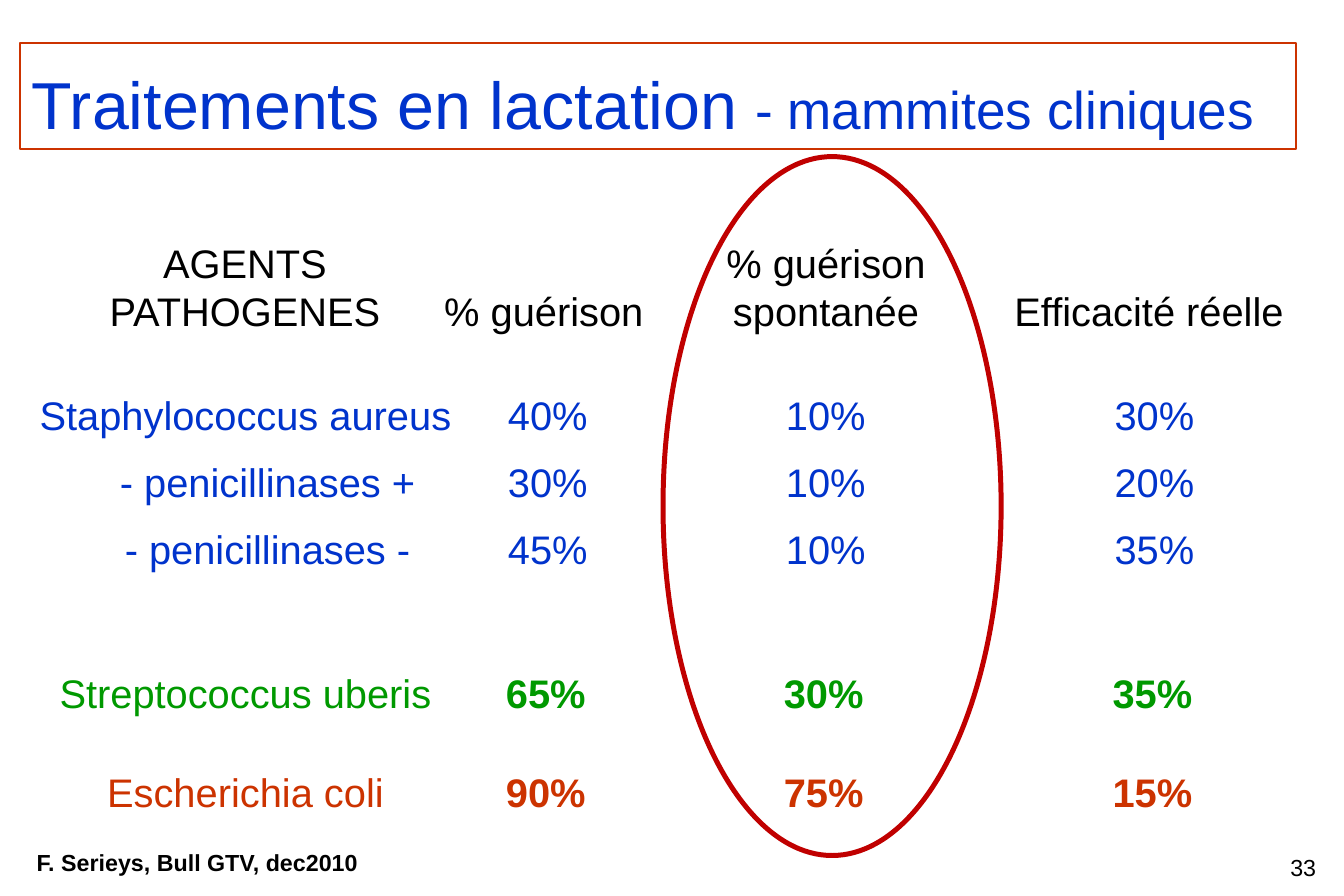
from pptx import Presentation
from pptx.dml.color import RGBColor
from pptx.enum.shapes import MSO_SHAPE as Shape
from pptx.enum.text import MSO_ANCHOR as Anchor, PP_ALIGN as Align
from pptx.util import Cm, Pt

COLOURS = {"black": "000000", "blue": "0033CC", "green": "009900",
           "red": "CC3300", "ring": "C00000"}
TITLE = [("Traitements en lactation ", 40), ("- mammites cliniques", 32)]

# lines, left, width, wraps
HEADERS = [
    (["AGENTS PATHOGENES"], 1.83, 6.76, True),
    (["% guérison"], 9.19, 4.75, False),
    (["% guérison", "spontanée"], 15.19, 4.75, False),
    (["Efficacité réelle"], 21.31, 6.25, False),
]
# top, colour, agents, then one list of rates per column
GROUPS = [
    (8.18, "blue",
     ["Staphylococcus aureus", "- penicillinases +", "- penicillinases -"],
     [["40%", "30%", "45%"], ["10%", "10%", "10%"], ["30%", "20%", "35%"]]),
    (14.1, "green", ["Streptococcus uberis"], [["65%"], ["30%"], ["35%"]]),
    (16.2, "red", ["Escherichia coli"], [["90%"], ["75%"], ["15%"]]),
]
SOURCE = "F. Serieys, Bull GTV, dec2010"
PAGE = "33"

RATE_LEFTS = [10.29, 16.2, 23.19]
AGENT_LEFT, AGENT_WIDTH, RATE_WIDTH = 0.28, 9.88, 2.72
LINE_HEIGHT, HEADER_BOTTOM = 1.27, 7.24
BOLD_SHIFT = 0.22
SUB_INDENT = Cm(0.94)


def colour(name):
    return RGBColor.from_string(COLOURS[name])


def style(font, size, colour_name, bold=False):
    font.name, font.size, font.bold = "Arial", Pt(size), bold
    font.color.rgb = colour(colour_name)


def add_text(slide, lines, box, colour_name="black", size=24, bold=False,
             align=Align.CENTER, wrap=True, spacing=1.0, indent=0):
    """Spacing and indent apply to every line after the first."""
    frame = slide.shapes.add_textbox(*map(Cm, box)).text_frame
    frame.word_wrap = wrap
    for number, line in enumerate(lines):
        paragraph = frame.add_paragraph() if number else frame.paragraphs[0]
        paragraph.text = line
        paragraph.alignment = align
        if number:
            paragraph.line_spacing = spacing
            paragraph._p.get_or_add_pPr().set("marL", str(indent))
        style(paragraph.font, size, colour_name, bold)
    return frame


def add_outline(slide, kind, box, colour_name, width):
    shape = slide.shapes.add_shape(kind, *map(Cm, box))
    shape.shadow.inherit = False
    shape.fill.background()
    shape.line.color.rgb = colour(colour_name)
    shape.line.width = Pt(width)
    return shape


def add_title(slide):
    shape = add_outline(slide, Shape.RECTANGLE, (0.43, 0.91, 27.13, 2.26), "red", 1)
    frame = shape.text_frame
    frame.word_wrap = True
    frame.vertical_anchor = Anchor.BOTTOM
    paragraph = frame.paragraphs[0]
    paragraph.alignment = Align.LEFT
    for text, size in TITLE:
        run = paragraph.add_run()
        run.text = text
        style(run.font, size, "blue")


def add_headers(slide):
    for lines, left, width, wrap in HEADERS:
        height = 2.29 if wrap or len(lines) > 1 else LINE_HEIGHT
        add_text(slide, lines, (left, HEADER_BOTTOM - height, width, height), wrap=wrap)


def add_groups(slide):
    for top, colour_name, agents, columns in GROUPS:
        single = len(agents) == 1
        height = LINE_HEIGHT if single else 4.11
        add_text(slide, agents, (AGENT_LEFT, top, AGENT_WIDTH, height),
                 colour_name, spacing=1.4, indent=SUB_INDENT)
        for left, rates in zip(RATE_LEFTS, columns):
            box = (left + BOLD_SHIFT if single else left, top,
                   RATE_WIDTH - 2 * BOLD_SHIFT if single else RATE_WIDTH, height)
            add_text(slide, rates, box, colour_name, bold=single, wrap=not single,
                     align=Align.JUSTIFY if single else Align.CENTER, spacing=1.4)


def main():
    presentation = Presentation()
    presentation.slide_width, presentation.slide_height = Cm(28.58), Cm(19.05)
    slide = presentation.slides.add_slide(presentation.slide_layouts[6])
    number = add_text(slide, [PAGE], (27.15, 18.01, 1.09, 0.84), size=14,
                      align=Align.RIGHT, wrap=False)
    number.vertical_anchor = Anchor.MIDDLE
    add_title(slide)
    add_headers(slide)
    add_groups(slide)
    add_text(slide, [SOURCE], (0.53, 17.91, 8.46, 0.84), size=14, bold=True,
             align=Align.LEFT)
    add_outline(slide, Shape.OVAL, (14.1, 3.33, 7.19, 14.86), "ring", 3)
    presentation.save("out.pptx")


if __name__ == "__main__":
    main()
